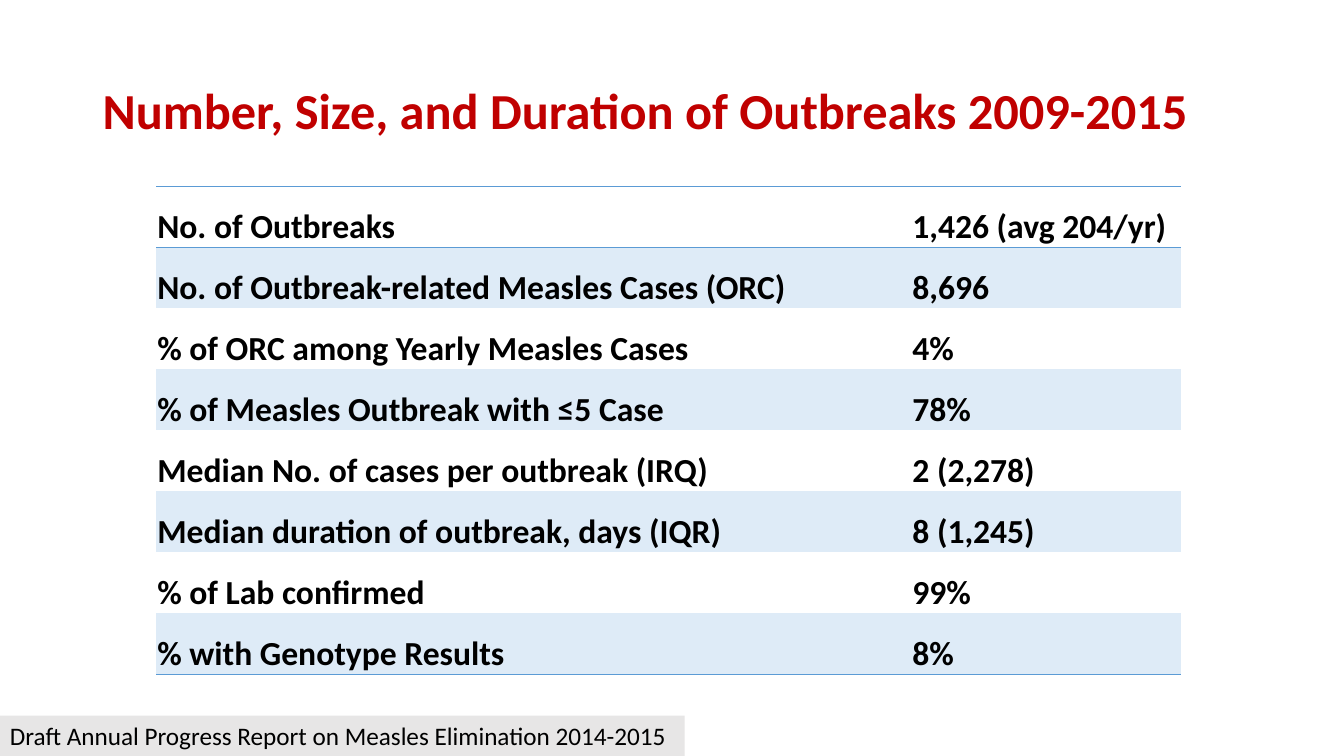
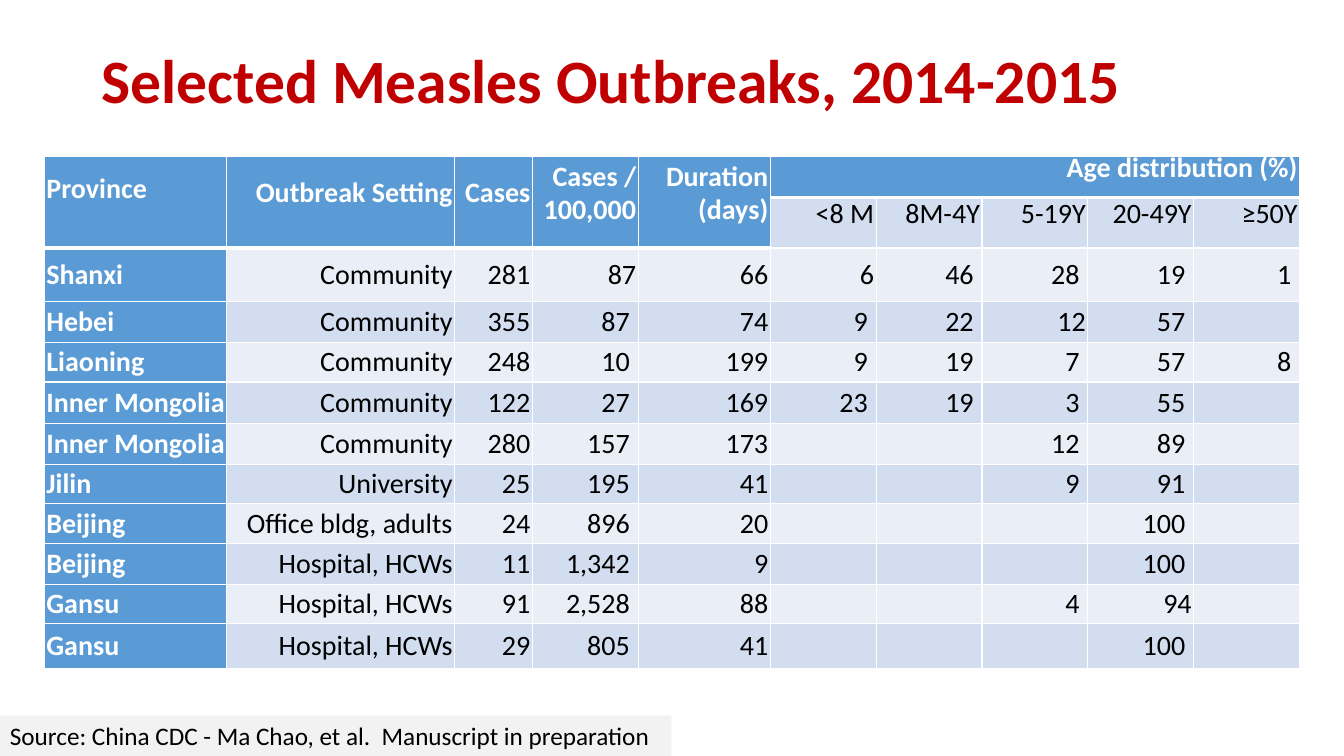
from lxml import etree
from pptx import Presentation
from pptx.dml.color import RGBColor
from pptx.enum import shapes, text
from pptx.oxml.ns import qn
from pptx.util import Inches, Pt

FONT = "Calibri"
PLAIN = "{2D5ABB26-0587-4C30-8999-92F81FD0307C}"  # table style without grid
HUES = {"title": "C00000", "ink": "000000", "white": "FFFFFF", "blue": "5B9BD5",
        "pale": "DEEBF7", "light": "EAEFF7", "mid": "D2DEEF"}
LEFT, RIGHT = text.PP_ALIGN.LEFT, text.PP_ALIGN.RIGHT
TOP, MID, LOW = (text.MSO_ANCHOR.TOP, text.MSO_ANCHOR.MIDDLE,
                 text.MSO_ANCHOR.BOTTOM)


def write(frame, words, size, hue="ink", bold=False, align=LEFT, space=None):
    frame.text = words
    frame.word_wrap = True
    for para in frame.paragraphs:
        para.alignment = align
        para.line_spacing = space
        para.font.size = Pt(size)
        for run in para.runs:
            font = run.font
            font.name, font.size, font.bold = FONT, Pt(size), bold
            font.color.rgb = RGBColor.from_string(HUES[hue])


def dress(cell, fill, edges, pads, anchor):
    """Set fill, margins, anchor and borders; edges maps L, R, T, B to (hue, points)."""
    props = cell._tc.get_or_add_tcPr()
    for side in "LRTB":
        if side in edges:
            hue, width = edges[side]
            line = etree.SubElement(props, qn("a:ln" + side), w=str(Pt(width)))
            solid = etree.SubElement(line, qn("a:solidFill"))
            etree.SubElement(solid, qn("a:srgbClr"), val=HUES[hue])
    if fill:
        cell.fill.solid()
        cell.fill.fore_color.rgb = RGBColor.from_string(HUES[fill])
    else:
        cell.fill.background()
    cell.margin_left, cell.margin_top, cell.margin_right, cell.margin_bottom = map(
        Inches, pads)
    cell.vertical_anchor = anchor


deck = Presentation()
deck.slide_width, deck.slide_height = Inches(13.33), Inches(7.5)

# Per slide: title, its size, left, top and height; footer, its width and fill;
# table left and top, column widths, row heights
plans = [
    ("Number, Size, and Duration of Outbreaks 2009-2015", 36, 0.92, 0.4, 1.45,
     "Draft Annual Progress Report on Measles Elimination 2014-2015", 6.79, "E7E6E6",
     1.55, 1.85, [7.49, 2.67], [0.605] * 8),
    ("Selected Measles Outbreaks, 2014-2015", 44, 0.91, 0.22, 1.22,
     "Source: China CDC - Ma Chao, et al.  Manuscript in preparation", 6.66, "F2F2F2",
     0.44, 1.55, [1.81, 2.26, 0.77, 1.05, 1.31] + [1.05] * 5,
     [0.41, 0.5, 0.53, 0.41, 0.39, 0.41, 0.41, 0.39, 0.39, 0.41, 0.39, 0.44]),
]
grids = []
for (title, size, left, top, height, note, width, grey,
     tab_x, tab_y, cols, rows) in plans:
    slide = deck.slides.add_slide(deck.slide_layouts[6])
    head = slide.shapes.add_textbox(Inches(left), Inches(top), Inches(11.5),
                                    Inches(height))
    write(head.text_frame, title, size, "title", True, space=0.9)
    head.text_frame.vertical_anchor = MID

    frame = slide.shapes.add_table(len(rows), len(cols), Inches(tab_x), Inches(tab_y),
                                   Inches(sum(cols)), Inches(sum(rows)))
    grid = frame.table
    grid.first_row = grid.horz_banding = False
    grid._tbl.tblPr.find(qn("a:tableStyleId")).text = PLAIN
    for col, wide in zip(grid.columns, cols):
        col.width = Inches(wide)
    for row, tall in zip(grid.rows, rows):
        row.height = Inches(tall)
    grids.append(grid)

    foot = slide.shapes.add_shape(shapes.MSO_SHAPE.RECTANGLE, 0, Inches(7.1),
                                  Inches(width), Inches(0.4))
    foot.shadow.inherit = False
    foot.fill.solid()
    foot.fill.fore_color.rgb = RGBColor.from_string(grey)
    foot.line.fill.background()
    write(foot.text_frame, note, 18)
    foot.text_frame.vertical_anchor = TOP

facts, cases = grids

# Slide 1: summary figures
stats = [
    ("No. of Outbreaks", "1,426 (avg 204/yr)"),
    ("No. of Outbreak-related Measles Cases (ORC)", "8,696"),
    ("% of ORC among Yearly Measles Cases", "4%"),
    ("% of Measles Outbreak with ≤5 Case", "78%"),
    ("Median No. of cases per outbreak (IRQ)", "2 (2,278)"),
    ("Median duration of outbreak, days (IQR)", "8 (1,245)"),
    ("% of Lab confirmed", "99%"),
    ("% with Genotype Results", "8%"),
]
rule = ("blue", 1)
borders = {0: {"T": rule, "B": rule}, len(stats) - 1: {"B": rule}}
for r, pair in enumerate(stats):
    for c, words in enumerate(pair):
        cell = facts.cell(r, c)
        dress(cell, "pale" if r % 2 else None, borders.get(r, {}),
              (0.01, 0.01, 0.01, 0), LOW)
        write(cell.text_frame, words, 24, bold=True)

# Slide 2: outbreaks by province
data = [
    ["Province", "Outbreak Setting", "Cases", "Cases /\n100,000", "Duration\n(days)",
     "Age distribution (%)", "", "", "", ""],
    ["", "", "", "", "", "<8 M", "8M-4Y", "5-19Y", "20-49Y", "≥50Y"],
    ["Shanxi", "Community", "281", "87", "66", "6", "46 ", "28 ", "19 ", "1 "],
    ["Hebei", "Community", "355", "87 ", "74", "9 ", "22 ", "12", "57 ", ""],
    ["Liaoning", "Community", "248", "10 ", "199", "9 ", "19 ", "7 ", "57 ", "8 "],
    ["Inner Mongolia", "Community", "122", "27 ", "169", "23 ", "19 ", "3 ", "55 ", ""],
    ["Inner Mongolia", "Community", "280", "157 ", "173", "", "", "12 ", "89 ", ""],
    ["Jilin", "University", "25", "195 ", "41", "", "", "9 ", "91 ", ""],
    ["Beijing", "Office bldg, adults", "24", "896 ", "20", "", "", "", "100 ", ""],
    ["Beijing", "Hospital, HCWs", "11", "1,342 ", "9", "", "", "", "100 ", ""],
    ["Gansu", "Hospital, HCWs", "91", "2,528 ", "88", "", "", "4 ", "94", ""],
    ["Gansu", "Hospital, HCWs", "29", "805 ", "41", "", "", "", "100 ", ""],
]
for c in range(5):
    cases.cell(0, c).merge(cases.cell(1, c))
cases.cell(0, 5).merge(cases.cell(0, 9))

for r, line in enumerate(data):
    for c, words in enumerate(line):
        cell = cases.cell(r, c)
        top = r == 0 or (r == 1 and c < 5)
        strong = top or c == 0
        fill = "blue" if strong else "mid" if r % 2 else "light"
        edges = dict.fromkeys("LRT", ("white", 1))
        edges["B"] = ("white", 3 if top else 1)
        corner = r == c == 0
        dress(cell, fill, edges, (0.02, 0.33 if corner else 0, 0.02, 0),
              TOP if corner else MID)
        write(cell.text_frame, words, 20, "white" if strong else "ink", strong,
              RIGHT if c else LEFT, Pt(12) if r < 2 else None)
        for para in cell.text_frame.paragraphs[1:]:
            para.space_before = Pt(12)

deck.save("out.pptx")
